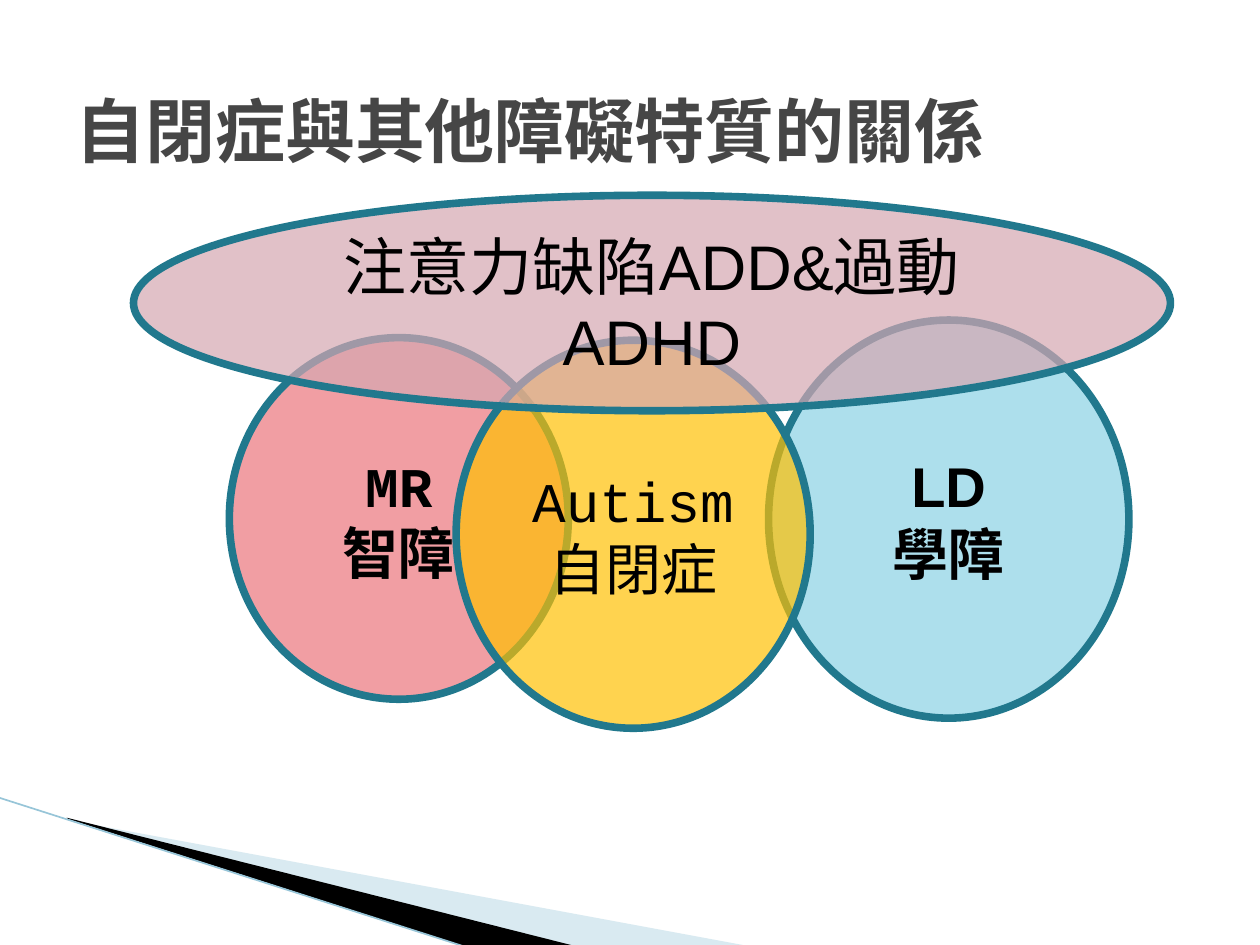
from lxml import etree
from pptx import Presentation
from pptx.dml.color import RGBColor
from pptx.enum.shapes import MSO_CONNECTOR, MSO_SHAPE
from pptx.enum.text import MSO_ANCHOR, PP_ALIGN
from pptx.oxml.ns import qn
from pptx.util import Inches, Pt

OVAL = MSO_SHAPE.OVAL
STRAIGHT = MSO_CONNECTOR.STRAIGHT
MIDDLE = MSO_ANCHOR.MIDDLE
CENTER, LEFT = PP_ALIGN.CENTER, PP_ALIGN.LEFT
CJK = "Noto Sans CJK SC"
EDGE = "21788D"

TITLE = "自閉症與其他障礙特質的關係"
WEDGES = [
    ([(0.55, 6.51), (5.95, 7.51), (4.56, 7.51), (0.55, 6.5)], "A0CBDC", 40),
    ([(0.53, 6.49), (4.57, 7.51), (3.72, 7.52), (0.54, 6.5)], "000000", 100),
]
STRIPE = (-0.01, 6.33, 3.71, 7.52)
OVALS = [
    ((6.1, 2.54, 2.86, 3.16), "7ACBE0", 61, ["LD", "學障"], "Arial", 32, True),
    ((1.82, 2.68, 2.69, 2.87), "EC767C", 70, ["MR", "智障"], "Courier New", 32, True),
    ((3.62, 2.7, 2.81, 3.08), "FFC000", 69, ["Autism", "自閉症"], "Courier New", 32, False),
    ((1.06, 1.55, 8.23, 1.71), "D5A7B1", 70, ["注意力缺陷ADD&過動ADHD"], "Arial", 36, False),
]


def color(code):
    return RGBColor.from_string(code)


def paint(shape, code, alpha):
    shape.shadow.inherit = False
    shape.fill.solid()
    shape.fill.fore_color.rgb = color(code)
    if alpha < 100:
        tint = shape.fill._xPr.find(qn("a:solidFill"))[0]
        etree.SubElement(tint, qn("a:alpha"), val=str(alpha * 1000))


def write(frame, lines, face, size, bold, code, align):
    frame.word_wrap = True
    frame.vertical_anchor = MIDDLE
    for i, line in enumerate(lines):
        para = frame.add_paragraph() if i else frame.paragraphs[0]
        para.alignment = align
        run = para.add_run()
        run.text = line
        font = run.font
        font.name, font.size, font.bold = face, Pt(size), bold
        font.color.rgb = color(code)
        latin = run._r.rPr.find(qn("a:latin"))
        east = etree.Element(qn("a:ea"), typeface=CJK)
        latin.addnext(east)


def add_wedge(slide, points, code, alpha):
    spots = [(Inches(x), Inches(y)) for x, y in points]
    pen = slide.shapes.build_freeform(*spots[0])
    pen.add_line_segments(spots[1:], close=True)
    wedge = pen.convert_to_shape()
    paint(wedge, code, alpha)
    wedge.line.fill.background()


def add_stripe(slide):
    stripe = slide.shapes.add_connector(STRAIGHT, *map(Inches, STRIPE))
    stripe.line.color.rgb = color("97C5D8")
    stripe.line.width = Pt(0.95)
    etree.SubElement(stripe._element.spPr, qn("a:effectLst"))


def add_oval(slide, box, code, alpha, lines, face, size, bold):
    oval = slide.shapes.add_shape(OVAL, *map(Inches, box))
    paint(oval, code, alpha)
    oval.line.color.rgb = color(EDGE)
    oval.line.width = Pt(4.33)
    write(oval.text_frame, lines, face, size, bold, "000000", CENTER)


def add_title(slide):
    box = slide.shapes.add_textbox(*map(Inches, (0.5, 0.5, 9, 1.05)))
    write(box.text_frame, [TITLE], CJK, 40, True, "464646", LEFT)


def main():
    deck = Presentation()
    deck.slide_width, deck.slide_height = Inches(10), Inches(7.5)
    slide = deck.slides.add_slide(deck.slide_layouts[6])
    for wedge in WEDGES:
        add_wedge(slide, *wedge)
    add_stripe(slide)
    for oval in OVALS[:-1]:
        add_oval(slide, *oval)
    add_title(slide)
    add_oval(slide, *OVALS[-1])
    deck.save("out.pptx")


if __name__ == "__main__":
    main()
